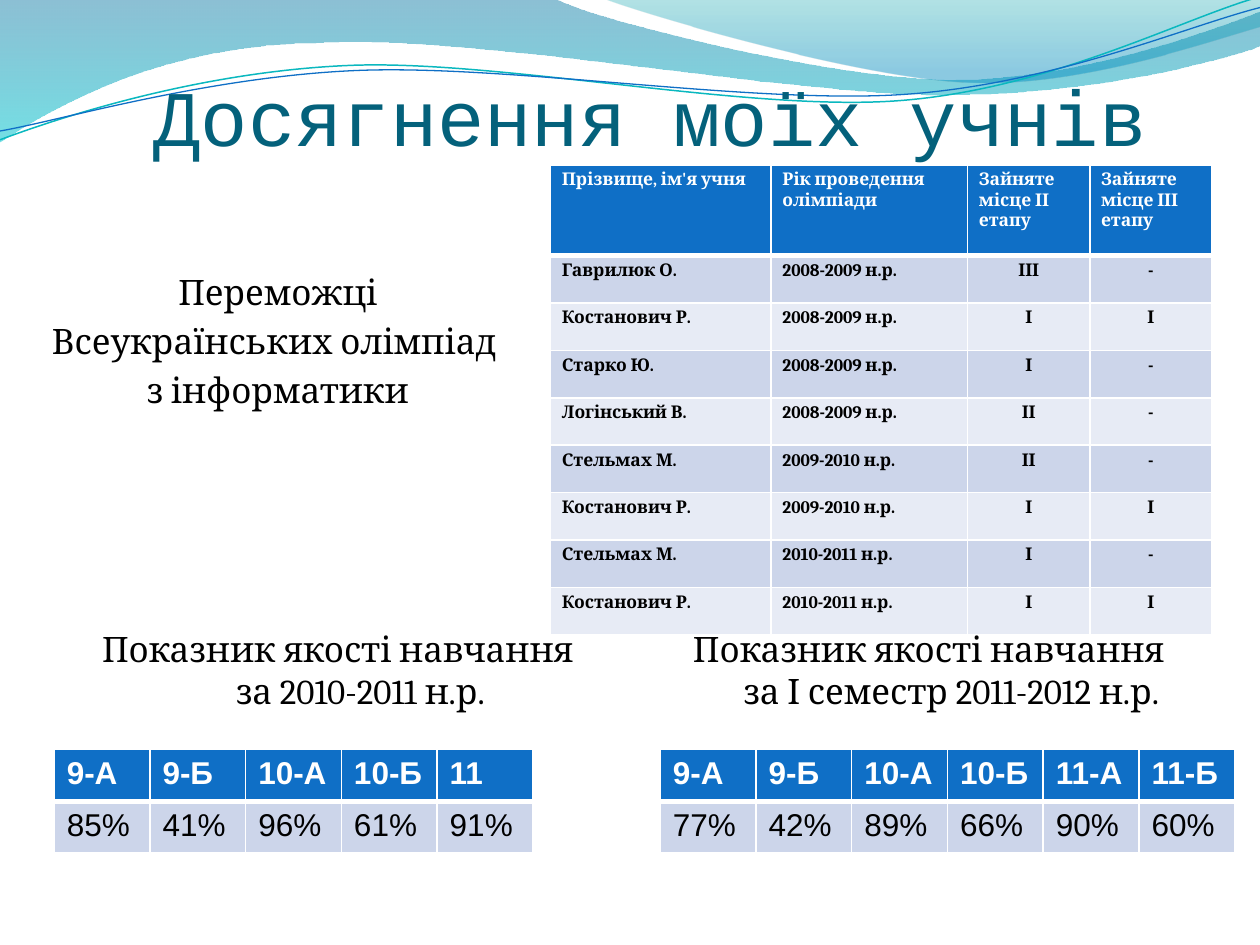
import lxml.etree
import pptx
import pptx.util
import pptx.dml.color
import pptx.enum.text
import pptx.oxml.ns

Inches = pptx.util.Inches
Pt = pptx.util.Pt
RGBColor = pptx.dml.color.RGBColor
ALIGN = pptx.enum.text.PP_ALIGN
ANCHOR = pptx.enum.text.MSO_ANCHOR
FIT = pptx.enum.text.MSO_AUTO_SIZE
qn = pptx.oxml.ns.qn

WHITE = RGBColor(0xFF, 0xFF, 0xFF)
BLACK = RGBColor(0, 0, 0)
BLUE = RGBColor(0x0F, 0x6F, 0xC6)
TEAL = RGBColor(0x0A, 0xB8, 0xBF)
DEEP = RGBColor(0x04, 0x61, 0x7B)
SEA = RGBColor(0x00, 0x74, 0xA1)
CYAN = RGBColor(0x00, 0xC6, 0xCF)
GREEN = RGBColor(0x00, 0xA1, 0xA9)
SKY = RGBColor(0x00, 0x8B, 0xBF)
BANDS = [RGBColor(0xCC, 0xD5, 0xEA), RGBColor(0xE7, 0xEB, 0xF5)]

LEFT_WAVE = [
    (0, -0.01), (4.4, -0.01),
    (4.76, 0.17, 6.64, 0.63, 7.58, 0.63), (8.53, 0.63, 9.58, 0.26, 10, 0.09),
    (10.01, 0.36),
    (9.83, 0.44, 8.7, 0.76, 7.46, 0.75), (6.22, 0.75, 3.82, 0.28, 2.57, 0.34),
    (1.29, 0.35, 0.46, 0.83, -0.01, 1.13), (0, -0.01),
]
RIGHT_WAVE = [
    (4.79, -0.01),
    (5.09, 0.11, 6.82, 0.62, 7.69, 0.65), (8.56, 0.69, 9.61, 0.32, 10, 0.21),
    (10, 0), (4.79, -0.01),
]
TEAL_LINE = [
    (0, 1.11),
    (0.48, 0.93, 1.58, 0.57, 2.77, 0.52), (3.95, 0.47, 5.93, 0.89, 7.13, 0.8),
    (8.33, 0.71, 9.38, 0.15, 9.98, -0.02),
]
BLUE_LINE = [
    (0, 1.04),
    (0.47, 0.96, 1.64, 0.61, 2.83, 0.56), (4.03, 0.51, 5.97, 0.83, 7.17, 0.75),
    (8.36, 0.67, 9.41, 0.21, 10, 0.06),
]

HEADS = ["Прізвище, ім'я учня", "Рік проведення олімпіади",
         "Зайняте\nмісце ІІ етапу", "Зайняте\nмісце ІІІ етапу"]
WINNERS = [
    ("Гаврилюк О.", "2008-2009 н.р.", "ІІІ", "-"),
    ("Костанович Р.", "2008-2009 н.р.", "І", "І"),
    ("Старко Ю.", "2008-2009 н.р.", "І", "-"),
    ("Логінський В.", "2008-2009 н.р.", "ІІ", "-"),
    ("Стельмах М.", "2009-2010 н.р.", "ІІ", "-"),
    ("Костанович Р.", "2009-2010 н.р.", "І", "І"),
    ("Стельмах М.", "2010-2011 н.р.", "І", "-"),
    ("Костанович Р.", "2010-2011 н.р.", "І", "І"),
]
MARKS_A = [("9-А", "9-Б", "10-А", "10-Б", "11"),
           ("85%", "41%", "96%", "61%", "91%")]
MARKS_B = [("9-А", "9-Б", "10-А", "10-Б", "11-А", "11-Б"),
           ("77%", "42%", "89%", "66%", "90%", "60%")]


def add_run(para, text, font, size, color, bold=False):
    run = para.add_run()
    run.text = text
    run.font.name = font
    run.font.size = Pt(size)
    run.font.color.rgb = color
    run.font.bold = bold


def add_path(slide, path, close):
    points = [(Inches(part[i]), Inches(part[i + 1]))
              for part in path for i in range(0, len(part), 2)]
    form = slide.shapes.build_freeform(*points[0])
    form.add_line_segments(points[1:], close=close)
    shape = form.convert_to_shape()
    shape.shadow.inherit = False
    lines = iter(list(shape.element.iter(qn("a:lnTo"))))
    for part in path[1:]:
        first = next(lines)
        if len(part) == 6:
            first.tag = qn("a:cubicBezTo")
            for extra in (next(lines), next(lines)):
                first.append(extra[0])
                extra.getparent().remove(extra)
    return shape


def add_wave(slide, path, stops):
    shape = add_path(slide, path, True)
    shape.line.fill.background()
    shape.fill.gradient()
    shape.fill.gradient_angle = 270
    nodes = shape.element.iter(qn("a:gs"))
    for stop, node, (place, color, alpha) in zip(
            shape.fill.gradient_stops, nodes, stops):
        stop.position = place
        stop.color.rgb = color
        lxml.etree.SubElement(node[0], qn("a:alpha"), val=str(alpha * 1000))


def add_curve(slide, path, color, width):
    shape = add_path(slide, path, False)
    shape.fill.background()
    shape.line.color.rgb = color
    shape.line.width = Pt(width)


def add_waves(slide):
    add_wave(slide, LEFT_WAVE, [(0, SEA, 45), (1, CYAN, 55)])
    add_wave(slide, RIGHT_WAVE, [(0, GREEN, 30), (0.8, SKY, 45)])
    add_curve(slide, TEAL_LINE, TEAL, 0.85)
    add_curve(slide, BLUE_LINE, BLUE, 0.75)


def set_title(slide, box, text):
    title = slide.shapes.title
    slide.shapes.element.append(title.element)
    title.left, title.top, title.width, title.height = map(Inches, box)
    frame = title.text_frame
    frame.auto_size = FIT.NONE
    frame.word_wrap = True
    frame.vertical_anchor = ANCHOR.BOTTOM
    frame.margin_left = frame.margin_right = frame.margin_bottom = 0
    frame.margin_top = Inches(0.05)
    para = frame.paragraphs[0]
    para.alignment = ALIGN.LEFT
    add_run(para, text, "Courier New", 45, DEEP)


def add_label(slide, box, paras):
    frame = slide.shapes.add_textbox(*map(Inches, box)).text_frame
    frame.word_wrap = True
    for i, lines in enumerate(paras):
        para = frame.add_paragraph() if i else frame.paragraphs[0]
        para.alignment = ALIGN.CENTER
        if i:
            para.space_before = Pt(4)
        props = para._p.get_or_add_pPr()
        props.set("marL", str(Inches(0.3)))
        props.set("indent", str(Inches(-0.3)))
        for j, line in enumerate(lines.split("\n")):
            if j:
                para.add_line_break()
            add_run(para, line, "Cambria", 20, BLACK)


def set_edges(cell, top, bottom):
    props = cell._tc.get_or_add_tcPr()
    for side, width in (("L", 1), ("R", 1), ("T", top), ("B", bottom)):
        edge = lxml.etree.SubElement(props, qn("a:ln" + side), w=str(Pt(width)))
        fill = lxml.etree.SubElement(edge, qn("a:solidFill"))
        lxml.etree.SubElement(fill, qn("a:srgbClr"), val=str(WHITE))


def add_grid(slide, spot, cols, heights, rows, font, size, bold, inset, mid=()):
    box = (*spot, sum(cols), sum(heights))
    table = slide.shapes.add_table(len(rows), len(cols), *map(Inches, box)).table
    for col, width in zip(table.columns, cols):
        col.width = Inches(width)
    for r, row in enumerate(rows):
        table.rows[r].height = Inches(heights[r])
        for c, text in enumerate(row):
            cell = table.cell(r, c)
            set_edges(cell, 3 if r == 1 else 1, 1 if r else 3)
            cell.fill.solid()
            cell.fill.fore_color.rgb = BANDS[(r - 1) % 2] if r else BLUE
            cell.margin_left = cell.margin_right = Inches(inset[0])
            cell.margin_top = cell.margin_bottom = Inches(inset[1])
            for i, line in enumerate(text.split("\n")):
                frame = cell.text_frame
                para = frame.add_paragraph() if i else frame.paragraphs[0]
                if r and c in mid:
                    para.alignment = ALIGN.CENTER
                add_run(para, line, font, size, BLACK if r else WHITE,
                        bold or r == 0)


def add_marks(slide, spot, rows):
    add_grid(slide, spot, [0.76] * len(rows[0]), [0.41] * 2, rows,
             "Arial", 18, False, (0.1, 0.05))


def main():
    deck = pptx.Presentation()
    deck.slide_width, deck.slide_height = Inches(10), Inches(7.5)
    slide = deck.slides.add_slide(deck.slide_layouts[5])
    add_waves(slide)
    set_title(slide, (1.22, 0.91, 9, 0.38), "Досягнення моїх учнів")
    add_label(slide, (0.12, 2.1, 4.17, 1.42),
              ["Переможці", "Всеукраїнських олімпіад ", "з інформатики"])
    add_grid(slide, (4.37, 1.31), [1.75, 1.56, 0.97, 0.97],
             [0.72] + [3.01 / len(WINNERS)] * len(WINNERS), [HEADS] + WINNERS,
             "Cambria", 10, True, (0.09, 0.04), (2, 3))
    add_marks(slide, (0.43, 5.95), MARKS_A)
    add_label(slide, (0.67, 4.93, 4.02, 0.77),
              ["Показник якості навчання\n за 2010-2011 н.р."])
    add_marks(slide, (5.24, 5.95), MARKS_B)
    add_label(slide, (5.39, 4.93, 4.02, 0.77),
              ["Показник якості навчання \nза І семестр 2011-2012 н.р."])
    deck.save("out.pptx")


if __name__ == "__main__":
    main()
